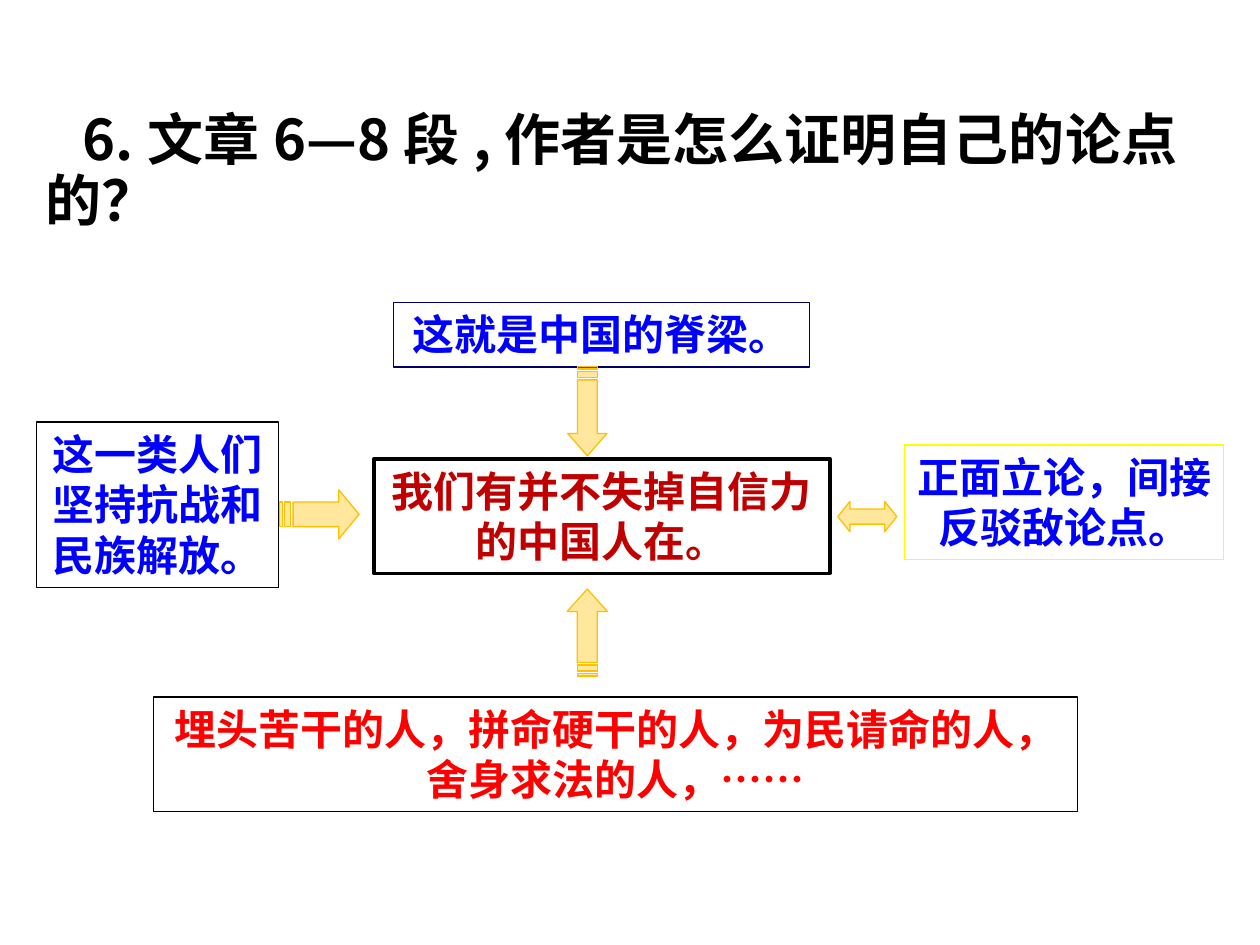
from dataclasses import dataclass

from pptx import Presentation
from pptx.dml.color import RGBColor
from pptx.enum.shapes import MSO_SHAPE as Shape
from pptx.enum.text import MSO_ANCHOR as Anchor, PP_ALIGN as Align
from pptx.oxml.ns import qn
from pptx.util import Cm, Pt
from lxml.etree import SubElement


@dataclass(frozen=True)
class Theme:
    font: str = "Noto Sans CJK SC"
    title_size: int = 32
    body_size: int = 24
    black: str = "000000"
    white: str = "FFFFFF"
    blue: str = "0000FF"
    navy: str = "000066"
    red: str = "FF0000"
    dark_red: str = "C00000"
    yellow: str = "FFFF00"
    gold: str = "FFC000"
    title_opacity: int = 21
    opacity: int = 38


class Board:
    def __init__(self, slide, theme):
        self.s = slide
        self.theme = theme

    def paint(self, sp, fill, opacity, line=None, weight=0.75):
        sp.shadow.inherit = False
        sp.fill.solid()
        sp.fill.fore_color.rgb = RGBColor.from_string(fill)
        color = sp._element.spPr.find(qn("a:solidFill"))[0]
        SubElement(color, qn("a:alpha")).set("val", str(opacity * 1000))
        if line:
            sp.line.color.rgb = RGBColor.from_string(line)
            sp.line.width = Pt(weight)
        else:
            sp.line.fill.background()

    def add_text(self, sp, text, size, color, align):
        tf = sp.text_frame
        tf.word_wrap = True
        tf.vertical_anchor = Anchor.TOP
        p = tf.paragraphs[0]
        p.alignment = align
        r = p.add_run()
        r.text = text
        r.font.size = Pt(size)
        r.font.bold = True
        r.font.name = self.theme.font
        r.font.color.rgb = RGBColor.from_string(color)
        SubElement(r._r.get_or_add_rPr(), qn("a:ea")).set("typeface", self.theme.font)
        return tf, p

    def title(self, text, x, y, w, h):
        t = self.theme
        sp = self.s.shapes.add_shape(Shape.RECTANGLE, Cm(x), Cm(y), Cm(w), Cm(h))
        self.paint(sp, t.white, t.title_opacity)
        tf, p = self.add_text(sp, text, t.title_size, t.black, Align.LEFT)
        tf.margin_left = tf.margin_right = Cm(0.18)
        tf.margin_top = tf.margin_bottom = Cm(0.1)
        p.line_spacing = Pt(35)
        p._p.get_or_add_pPr().set("indent", str(Cm(0.75)))

    def box(self, text, x, y, w, h, color, line, weight=0.75):
        t = self.theme
        sp = self.s.shapes.add_shape(Shape.RECTANGLE, Cm(x), Cm(y), Cm(w), Cm(h))
        self.paint(sp, t.white, t.opacity, line, weight)
        self.add_text(sp, text, t.body_size, color, Align.CENTER)

    def striped_arrow(self, cx, cy, length, width, head, rotation=0):
        """Draw an arrow with two tail stripes, centred on (cx, cy)."""
        x, y = cx - length / 2, cy - width / 2
        top, bottom = width / 4, width * 3 / 4
        neck, shaft = length - head, 0.27
        outlines = [[(neck, 0), (neck, top), (shaft, top), (shaft, bottom),
                     (neck, bottom), (neck, width), (length, width / 2)]]
        for start, end in ((0.1, 0.22), (0, 0.05)):
            outlines.append([(start, top), (start, bottom), (end, bottom), (end, top)])

        def point(dx, dy):
            return Cm(x + dx), Cm(y + dy)

        fb = self.s.shapes.build_freeform(*point(*outlines[0][0]))
        for i, outline in enumerate(outlines):
            if i:
                fb.move_to(*point(*outline[0]))
            fb.add_line_segments([point(*c) for c in outline[1:]], close=True)
        sp = fb.convert_to_shape()
        sp.rotation = rotation
        self.paint(sp, self.theme.gold, self.theme.opacity, self.theme.gold)

    def double_arrow(self, x, y, w, h):
        sp = self.s.shapes.add_shape(Shape.LEFT_RIGHT_ARROW, Cm(x), Cm(y), Cm(w), Cm(h))
        sp.adjustments[0], sp.adjustments[1] = 0.5, 0.4
        self.paint(sp, self.theme.gold, self.theme.opacity, self.theme.gold)


def main():
    prs = Presentation()
    prs.slide_width, prs.slide_height = Cm(25.4), Cm(19.05)
    t = Theme()
    board = Board(prs.slides.add_slide(prs.slide_layouts[6]), t)

    board.title("6.文章6—8段,作者是怎么证明自己的论点的？", 0.74, 2.13, 23.72, 3.28)

    board.box("我们有并不失掉自信力的中国人在。", 7.54, 9.25, 9.19, 2.31,
              t.dark_red, t.black, 2)
    board.box("埋头苦干的人，拼命硬干的人，为民请命的人，舍身求法的人，……",
              3.1, 14.05, 18.62, 2.31, t.red, t.black)
    board.box("这就是中国的脊梁。", 7.94, 6.1, 8.38, 1.3, t.blue, t.navy)
    board.box("正面立论，间接反驳敌论点。", 18.24, 8.97, 6.43, 2.31, t.blue, t.yellow)
    board.box("这一类人们坚持抗战和民族解放。", 0.74, 8.51, 4.88, 3.33, t.blue, t.black)

    board.striped_arrow(11.84, 12.75, 1.75, 0.81, 0.45, 270)
    board.striped_arrow(11.84, 8.29, 1.8, 0.79, 0.45, 90)
    board.striped_arrow(6.44, 10.37, 1.6, 0.99, 0.41)
    board.double_arrow(16.89, 10.11, 1.19, 0.61)

    prs.save("out.pptx")


if __name__ == "__main__":
    main()
